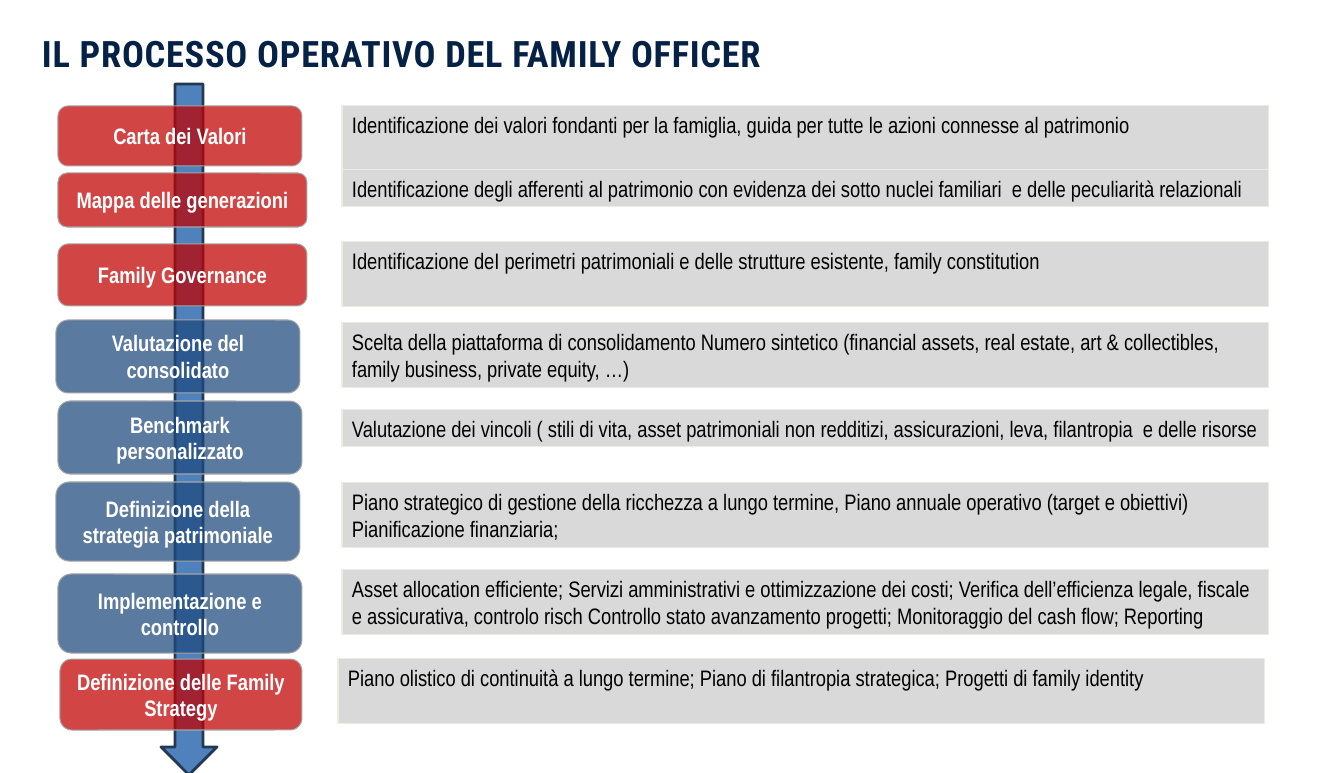
"""Build the slide on the family officer's operating process."""
from lxml import etree
from pptx import Presentation
from pptx.dml.color import RGBColor
from pptx.enum import shapes, text
from pptx.oxml import ns
from pptx.util import Pt

PX = 914400 / 100.8
COLOURS = {
    "title": "052146", "arrow": "4F81BD", "arrow line": "233953",
    "red": "C00000", "blue": "1F497D", "step line": "A6A6A6",
    "grey": "D9D9D9", "grey line": "EEECE1", "white": "FFFFFF", "black": "000000",
}
STEPS = [
    (["Carta dei Valori"], "red", (58, 106, 244, 60),
     ["Identificazione dei valori fondanti per la famiglia, guida per tutte le azioni connesse al patrimonio"],
     (342, 106, 927, 65)),
    (["Mappa delle generazioni"], "red", (58, 173, 249, 54),
     ["Identificazione degli afferenti al patrimonio con evidenza dei sotto nuclei familiari  e delle peculiarità relazionali"],
     (342, 170, 927, 37)),
    (["Family Governance"], "red", (58, 244, 249, 62),
     ["Identificazione deI perimetri patrimoniali e delle strutture esistente, family constitution"],
     (342, 242, 927, 65)),
    (["Valutazione del consolidato"], "blue", (56, 320, 244, 73),
     ["Scelta della piattaforma di consolidamento Numero sintetico (financial assets, real estate, "
      "art & collectibles, family business, private equity, …)"],
     (342, 323, 927, 65)),
    (["Benchmark personalizzato"], "blue", (58, 401, 244, 73),
     ["Valutazione dei vincoli ( stili di vita, asset patrimoniali non redditizi, assicurazioni, leva, "
      "filantropia  e delle risorse"],
     (342, 410, 927, 37)),
    (["Definizione della", "strategia patrimoniale"], "blue", (56, 482, 244, 79),
     ["Piano strategico di gestione della ricchezza a lungo termine, Piano annuale operativo (target e obiettivi)",
      "Pianificazione finanziaria;"],
     (342, 483, 927, 65)),
    (["Implementazione e controllo"], "blue", (58, 574, 244, 79),
     ["Asset allocation efficiente; Servizi amministrativi e ottimizzazione dei costi; Verifica dell’efficienza "
      "legale, fiscale e assicurativa, controlo risch Controllo stato avanzamento progetti; "
      "Monitoraggio del cash flow; Reporting"],
     (342, 570, 927, 65)),
    (["Definizione delle Family Strategy"], "red", (60, 659, 242, 71),
     ["Piano olistico di continuità a lungo termine; Piano di filantropia strategica; Progetti di family identity"],
     (338, 659, 927, 65)),
]


def add_box(kind, box, fill, line, width):
    shape = slide.shapes.add_shape(kind, *(round(length * PX) for length in box))
    shape.shadow.inherit = False
    shape.fill.solid()
    shape.fill.fore_color.rgb = RGBColor.from_string(COLOURS[fill])
    shape.line.color.rgb = RGBColor.from_string(COLOURS[line])
    shape.line.width = Pt(width)
    return shape


def write(shape, lines, alignment, anchor, font_name, size, colour, bold):
    frame = shape.text_frame
    frame.word_wrap = True
    frame.vertical_anchor = anchor
    for index, line in enumerate(lines):
        paragraph = frame.add_paragraph() if index else frame.paragraphs[0]
        paragraph.alignment = alignment
        run = paragraph.add_run()
        run.text = line
        run.font.name = font_name
        run.font.size = Pt(size)
        run.font.bold = bold
        run.font.color.rgb = RGBColor.from_string(COLOURS[colour])


presentation = Presentation()
presentation.slide_width = round(1344 * PX)
presentation.slide_height = round(773 * PX)
slide = presentation.slides.add_slide(presentation.slide_layouts[5])

title = slide.shapes.title
title.left, title.top, title.width, title.height = (round(length * PX) for length in (42, 24, 1146, 48))
frame = title.text_frame
frame.margin_left = frame.margin_top = frame.margin_right = frame.margin_bottom = 0
frame.auto_size = text.MSO_AUTO_SIZE.NONE
write(title, ["IL PROCESSO OPERATIVO DEL FAMILY OFFICER"], text.PP_ALIGN.LEFT,
      text.MSO_ANCHOR.TOP, "Roboto Condensed", 26, "title", True)
paragraph = frame.paragraphs[0]
paragraph.line_spacing = Pt(36.4)
paragraph.runs[0].font._element.set("spc", "50")

add_box(shapes.MSO_SHAPE.DOWN_ARROW, (161, 84, 56, 691), "arrow", "arrow line", 2)

for label, colour, step_box, description, description_box in STEPS:
    panel = add_box(shapes.MSO_SHAPE.RECTANGLE, description_box, "grey", "grey line", 0.75)
    write(panel, description, text.PP_ALIGN.LEFT, text.MSO_ANCHOR.TOP,
          "Arial Narrow", 16, "black", False)
    step = add_box(shapes.MSO_SHAPE.ROUNDED_RECTANGLE, step_box, colour, "step line", 0.75)
    fill_colour = step._element.spPr.find(ns.qn("a:solidFill"))[0]
    etree.SubElement(fill_colour, ns.qn("a:alpha")).set("val", "73000")
    write(step, label, text.PP_ALIGN.CENTER, text.MSO_ANCHOR.MIDDLE,
          "Arial Narrow", 16, "white", True)

presentation.save("out.pptx")
